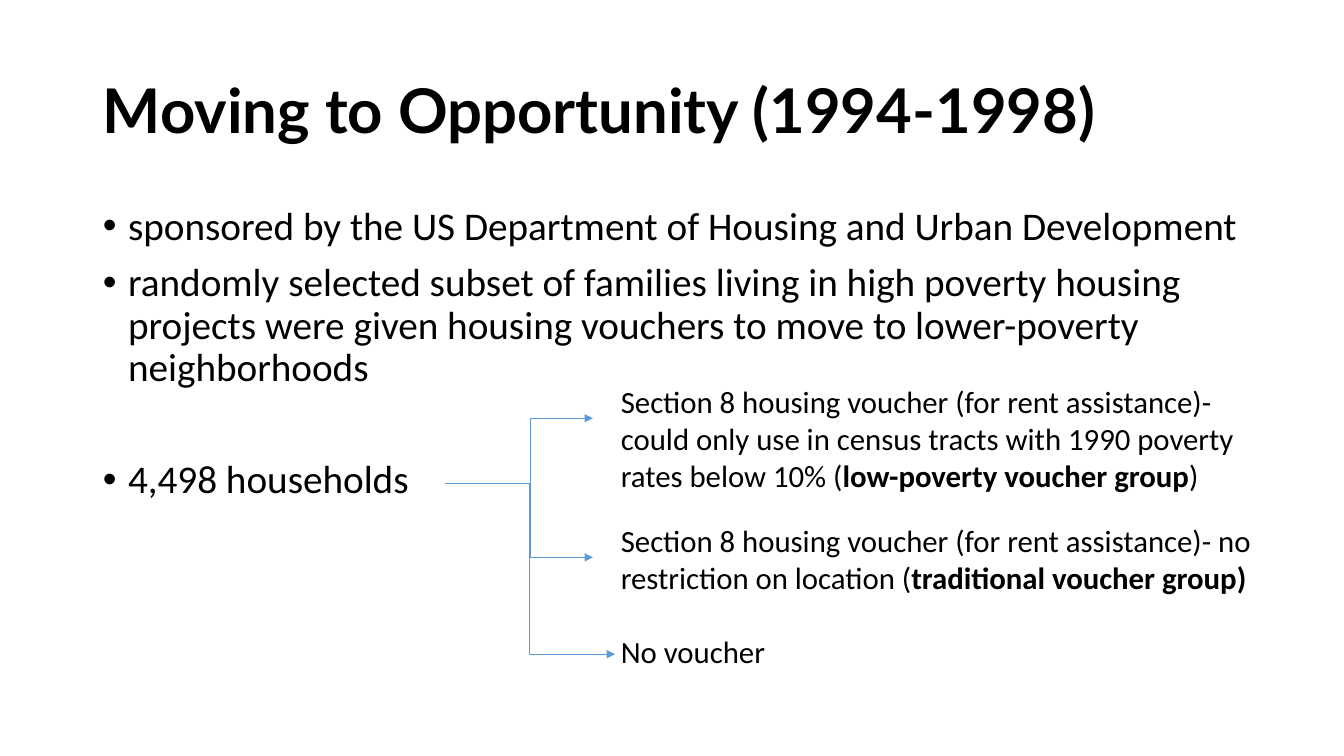
from lxml import etree
from pptx import Presentation
from pptx.dml.color import RGBColor
from pptx.enum.shapes import MSO_CONNECTOR
from pptx.enum.text import MSO_ANCHOR, MSO_AUTO_SIZE, PP_ALIGN
from pptx.oxml.ns import qn
from pptx.util import Inches, Pt

TITLE = "Moving to Opportunity (1994-1998)"
# (text, space before in points)
BULLETS = [
    ("sponsored by the US Department of Housing and Urban Development", 0),
    ("randomly selected subset of families living in high poverty housing "
     "projects were given housing vouchers to move to lower-poverty neighborhoods", 10),
    ("4,498 households", 50),
]
# runs (text, bold), box top, box height, arrow start x, arrow end x, arrow end y
GROUPS = [
    ([("Section 8 housing voucher (for rent assistance)- could only use in census "
       "tracts with 1990 poverty rates below 10% (", False),
      ("low-poverty voucher group", True), (")", False)], 3.75, 1.21, 4.64, 5.88, 4.15),
    ([("Section 8 housing voucher (for rent assistance)- no restriction on location (", False),
      ("traditional voucher group)", True)], 5.13, 0.84, 4.64, 5.88, 5.53),
    ([("No voucher", False)], 6.23, 0.47, 4.41, 6.1, 6.49),
]
BRANCH_Y = 4.8
GROUP_X, GROUP_W = 6.06, 6.56
BLACK, BLUE = "000000", "5B9BD5"


def place(sp, x, y, w, h):
    sp.left, sp.top, sp.width, sp.height = map(Inches, (x, y, w, h))


def add_run(p, text, size, font="Calibri", bold=False):
    r = p.add_run()
    r.text = text
    r.font.size = Pt(size)
    r.font.name = font
    r.font.bold = bold
    r.font.color.rgb = RGBColor.from_string(BLACK)


def add_arrow(s, x1, y1, x2, y2):
    arrow = s.shapes.add_connector(MSO_CONNECTOR.ELBOW, *map(Inches, (x1, y1, x2, y2)))
    arrow.line.color.rgb = RGBColor.from_string(BLUE)
    arrow.line.width = Pt(0.5)
    etree.SubElement(arrow.line._get_or_add_ln(), qn("a:tailEnd"), type="triangle")
    etree.SubElement(arrow._element.spPr, qn("a:effectLst"))


def add_title(s):
    title = s.shapes.title
    place(title, 0.92, 0.4, 11.5, 1.45)
    tf = title.text_frame
    tf.auto_size = MSO_AUTO_SIZE.NONE
    tf.vertical_anchor = MSO_ANCHOR.MIDDLE
    p = tf.paragraphs[0]
    p.alignment = PP_ALIGN.LEFT
    p.line_spacing = 0.9
    add_run(p, TITLE, 44, "Lato", True)


def add_bullets(s):
    body = s.placeholders[1]
    place(body, 0.92, 2, 11.5, 4.76)
    tf = body.text_frame
    tf.auto_size = MSO_AUTO_SIZE.NONE
    for i, (text, before) in enumerate(BULLETS):
        p = tf.add_paragraph() if i else tf.paragraphs[0]
        pPr = p._p.get_or_add_pPr()
        pPr.set("marL", str(Inches(0.25)))
        pPr.set("indent", str(-Inches(0.25)))
        p.line_spacing = 0.9
        p.space_before = Pt(before)
        add_run(p, text, 28)


def add_group(s, runs, top, height):
    box = s.shapes.add_textbox(*map(Inches, (GROUP_X, top, GROUP_W, height)))
    tf = box.text_frame
    tf.word_wrap = True
    tf.auto_size = MSO_AUTO_SIZE.SHAPE_TO_FIT_TEXT
    for text, bold in runs:
        add_run(tf.paragraphs[0], text, 22, bold=bold)


prs = Presentation()
prs.slide_width, prs.slide_height = Inches(13.33), Inches(7.5)
s = prs.slides.add_slide(prs.slide_layouts[1])
add_title(s)
add_bullets(s)
for runs, top, height, x1, x2, y2 in GROUPS:
    add_arrow(s, x1, BRANCH_Y, x2, y2)
    add_group(s, runs, top, height)
prs.save("out.pptx")
